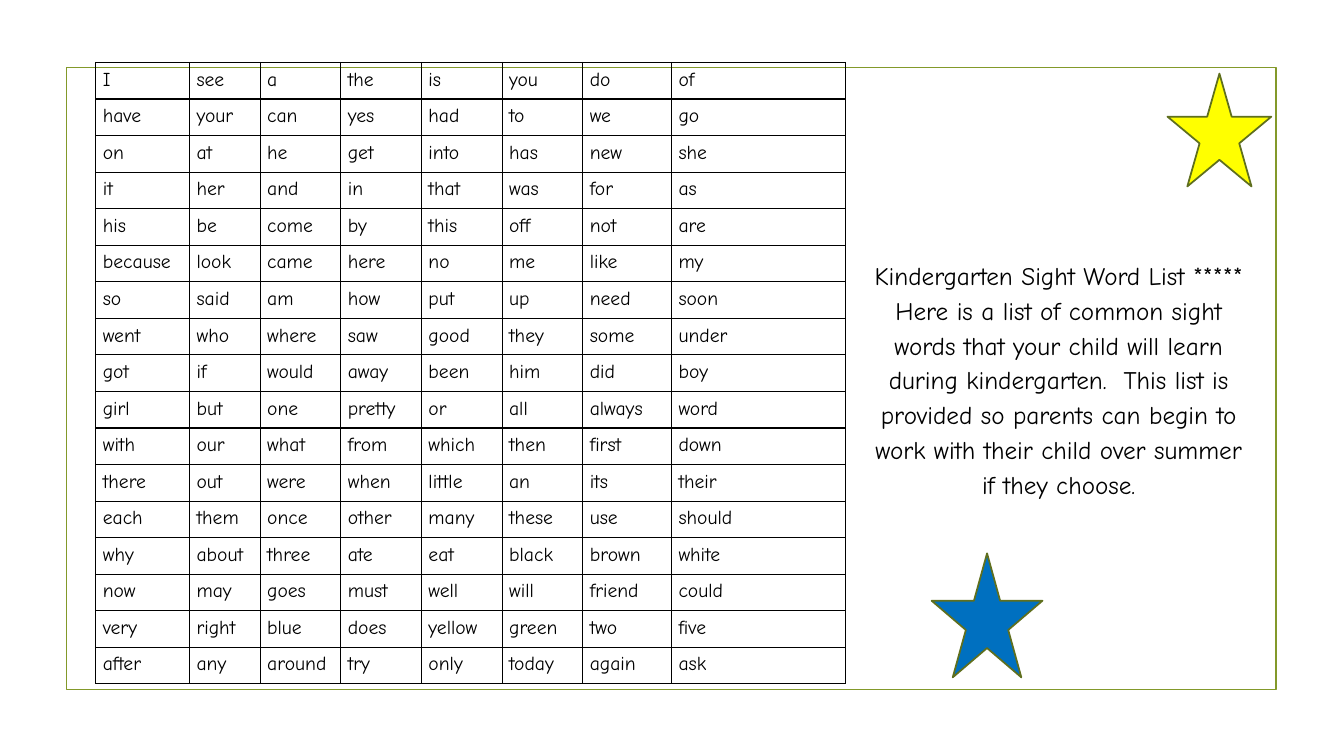
from lxml import etree
from pptx import Presentation
from pptx.dml.color import RGBColor
from pptx.enum.shapes import MSO_SHAPE
from pptx.enum.text import MSO_ANCHOR, MSO_AUTO_SIZE, PP_ALIGN
from pptx.oxml.ns import qn
from pptx.util import Inches, Pt

RECTANGLE = MSO_SHAPE.RECTANGLE
STAR = MSO_SHAPE.STAR_5_POINT
MIDDLE = MSO_ANCHOR.MIDDLE
CENTER = PP_ALIGN.CENTER
NO_AUTOFIT = MSO_AUTO_SIZE.NONE

FONT = "Comic Neue"
COLORS = {
    "text": "000000",
    "border": "000000",
    "frame": "83992A",
    "star_line": "5F6F1E",
    "yellow": "FFFF00",
    "blue": "0070C0",
}

SIGHT_WORDS = [
    "I see a the is you do of",
    "have your can yes had to we go",
    "on at he get into has new she",
    "it her and in that was for as",
    "his be come by this off not are",
    "because look came here no me like my",
    "so said am how put up need soon",
    "went who where saw good they some under",
    "got if would away been him did boy",
    "girl but one pretty or all always word",
    "with our what from which then first down",
    "there out were when little an its their",
    "each them once other many these use should",
    "why about three ate eat black brown white",
    "now may goes must well will friend could",
    "very right blue does yellow green two five",
    "after any around try only today again ask",
]
NOTE = [
    "Kindergarten Sight Word List *****",
    "Here is a list of common sight words that your child will learn during "
    "kindergarten.  This list is provided so parents can begin to work with "
    "their child over summer if they choose.",
]
STARS = [
    ("yellow", (11.58, 0.73, 1.03, 1.12)),
    ("blue", (9.24, 5.49, 1.1, 1.23)),
]
FRAME_AREA = (0.66, 0.67, 12, 6.17)
NOTE_AREA = (8.57, 0.89, 3.86, 5.71)
TABLE_AREA = (0.95, 0.62, 7.44, 6.17)
COLUMN_WIDTHS = [0.93, 0.7, 0.8, 0.8, 0.8, 0.8, 0.88, 1.73]


def color(name):
    return RGBColor.from_string(COLORS[name])


def area(lengths):
    return [Inches(length) for length in lengths]


def add_span(para, text, size):
    span = para.add_run()
    span.text = text
    span.font.name = FONT
    span.font.size = Pt(size)
    span.font.color.rgb = color("text")


def add_outlined_shape(page, kind, place, line, fill=None):
    shape = page.shapes.add_shape(kind, *area(place))
    shape.shadow.inherit = False
    if fill:
        shape.fill.solid()
        shape.fill.fore_color.rgb = color(fill)
    else:
        shape.fill.background()
    shape.line.color.rgb = color(line)
    shape.line.width = Pt(1.25)


def add_borders(cell):
    properties = cell._tc.get_or_add_tcPr()
    for position, side in enumerate(("lnL", "lnR", "lnT", "lnB")):
        line = etree.Element(qn(f"a:{side}"), w=str(Pt(1)))
        fill = etree.SubElement(line, qn("a:solidFill"))
        etree.SubElement(fill, qn("a:srgbClr"), val=COLORS["border"])
        properties.insert(position, line)


def add_word_table(page):
    rows = [line.split() for line in SIGHT_WORDS]
    table = page.shapes.add_table(
        len(rows), len(COLUMN_WIDTHS), *area(TABLE_AREA)
    ).table
    table.first_row = False
    table.horz_banding = False
    for column, width in zip(table.columns, COLUMN_WIDTHS):
        column.width = Inches(width)
    for row, words in zip(table.rows, rows):
        row.height = Inches(TABLE_AREA[3] / len(rows))
        for cell, word in zip(row.cells, words):
            cell.margin_left = cell.margin_right = Inches(0.07)
            cell.margin_top = cell.margin_bottom = Inches(0.06)
            cell.fill.background()
            add_borders(cell)
            add_span(cell.text_frame.paragraphs[0], word, 14)


def fill_note(box):
    box.left, box.top, box.width, box.height = area(NOTE_AREA)
    frame = box.text_frame
    frame.word_wrap = True
    frame.auto_size = NO_AUTOFIT
    frame.vertical_anchor = MIDDLE
    frame.margin_left = frame.margin_right = Inches(0.1)
    frame.margin_top = frame.margin_bottom = Inches(0.1)
    for index, text in enumerate(NOTE):
        para = frame.add_paragraph() if index else frame.paragraphs[0]
        para.alignment = CENTER
        para.line_spacing = 1.15
        para.space_before = Pt(0)
        add_span(para, text, 18)


def main():
    deck = Presentation()
    deck.slide_width = Inches(13.33)
    deck.slide_height = Inches(7.5)
    page = deck.slides.add_slide(deck.slide_layouts[5])
    add_outlined_shape(page, RECTANGLE, FRAME_AREA, "frame")
    add_word_table(page)
    fill_note(page.shapes.title)
    for fill, place in STARS:
        add_outlined_shape(page, STAR, place, "star_line", fill)
    deck.save("out.pptx")


if __name__ == "__main__":
    main()
